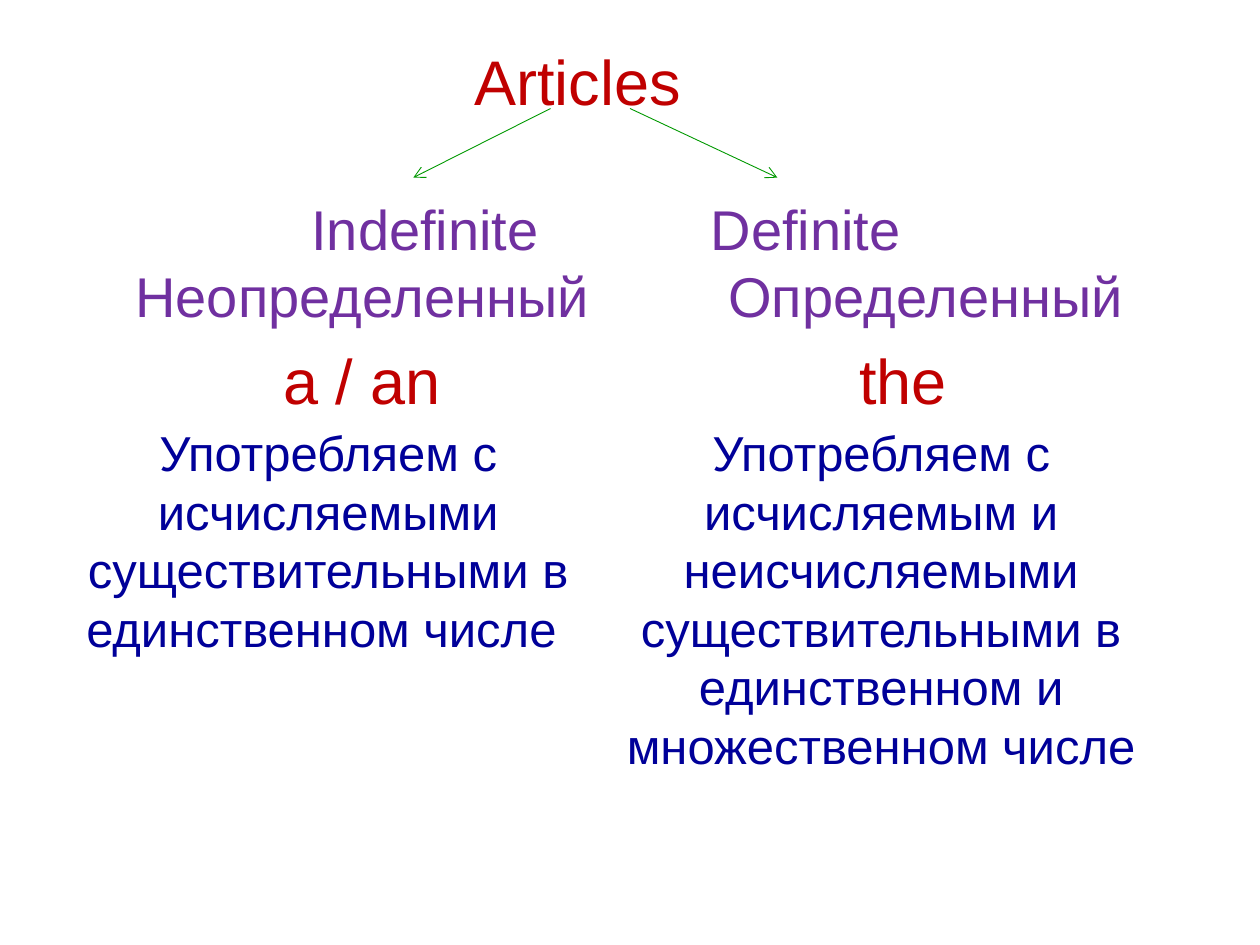
from lxml import etree
from pptx import Presentation
from pptx.dml.color import RGBColor
from pptx.enum.shapes import MSO_CONNECTOR
from pptx.enum.text import MSO_ANCHOR, MSO_AUTO_SIZE, PP_ALIGN
from pptx.oxml.ns import qn
from pptx.util import Pt

STRAIGHT = MSO_CONNECTOR.STRAIGHT
TOP = MSO_ANCHOR.TOP
CENTER = PP_ALIGN.CENTER
NO_AUTOFIT = MSO_AUTO_SIZE.NONE
TITLE_ONLY = 5


def color(value):
    return RGBColor.from_string(value)


class ArticlesSlide:
    font = "Arial"
    red = "C00000"
    purple = "7030A0"
    blue = "000099"
    green = "009900"
    leading = 1.195

    def __init__(self, deck):
        self.page = deck.slides.add_slide(deck.slide_layouts[TITLE_ONLY])

    def fill_text(self, box, text, size, hex_color):
        frame = box.text_frame
        frame.word_wrap = True
        frame.auto_size = NO_AUTOFIT
        frame.vertical_anchor = TOP
        frame.margin_left = frame.margin_right = 0
        frame.margin_top = frame.margin_bottom = 0
        para = frame.paragraphs[0]
        para.text = text
        para.alignment = CENTER
        para.space_before = Pt(0)
        para.line_spacing = Pt(round(size * self.leading, 1))
        para.font.name = self.font
        para.font.size = Pt(size)
        para.font.bold = False
        para.font.color.rgb = color(hex_color)

    def title(self, text, left, top, width, height):
        box = self.page.shapes.title
        box.left, box.top, box.width, box.height = map(Pt, (left, top, width, height))
        self.fill_text(box, text, 36, self.red)

    def label(self, text, middle, top, width, height, size, hex_color):
        box = self.page.shapes.add_textbox(
            Pt(middle - width / 2), Pt(top), Pt(width), Pt(height))
        self.fill_text(box, text, size, hex_color)

    def arrow(self, start, end):
        line = self.page.shapes.add_connector(STRAIGHT, *map(Pt, start + end))
        line.line.color.rgb = color(self.green)
        line.line.width = Pt(0.5)
        properties = line._element.spPr
        etree.SubElement(properties.find(qn("a:ln")), qn("a:tailEnd"), type="arrow")
        etree.SubElement(properties, qn("a:effectLst"))


def main():
    deck = Presentation()
    deck.slide_width, deck.slide_height = Pt(720), Pt(540)
    slide = ArticlesSlide(deck)

    slide.title("Articles", 36, 24.5, 588, 44)
    slide.arrow((314.6, 62), (236.2, 101.5))
    slide.arrow((360, 62), (444.2, 101.5))

    headings = [
        ("Indefinite", 243, 111.5),
        ("Definite", 460.5, 111.5),
        ("Неопределенный", 207, 149.7),
        ("Определенный", 529, 149.7),
    ]
    for text, middle, top in headings:
        slide.label(text, middle, top, 280, 39, 32, slide.purple)

    for text, middle in [("a / an", 207), ("the", 516)]:
        slide.label(text, middle, 195.5, 200, 44, 36, slide.red)

    rules = [
        ("Употребляем с исчисляемыми существительными в единственном числе ", 187.5),
        ("Употребляем с исчисляемым и неисчисляемыми существительными в "
         "единственном и множественном числе", 503.5),
    ]
    for text, middle in rules:
        slide.label(text, middle, 241.5, 316, 202, 28, slide.blue)

    deck.save("out.pptx")


if __name__ == "__main__":
    main()
